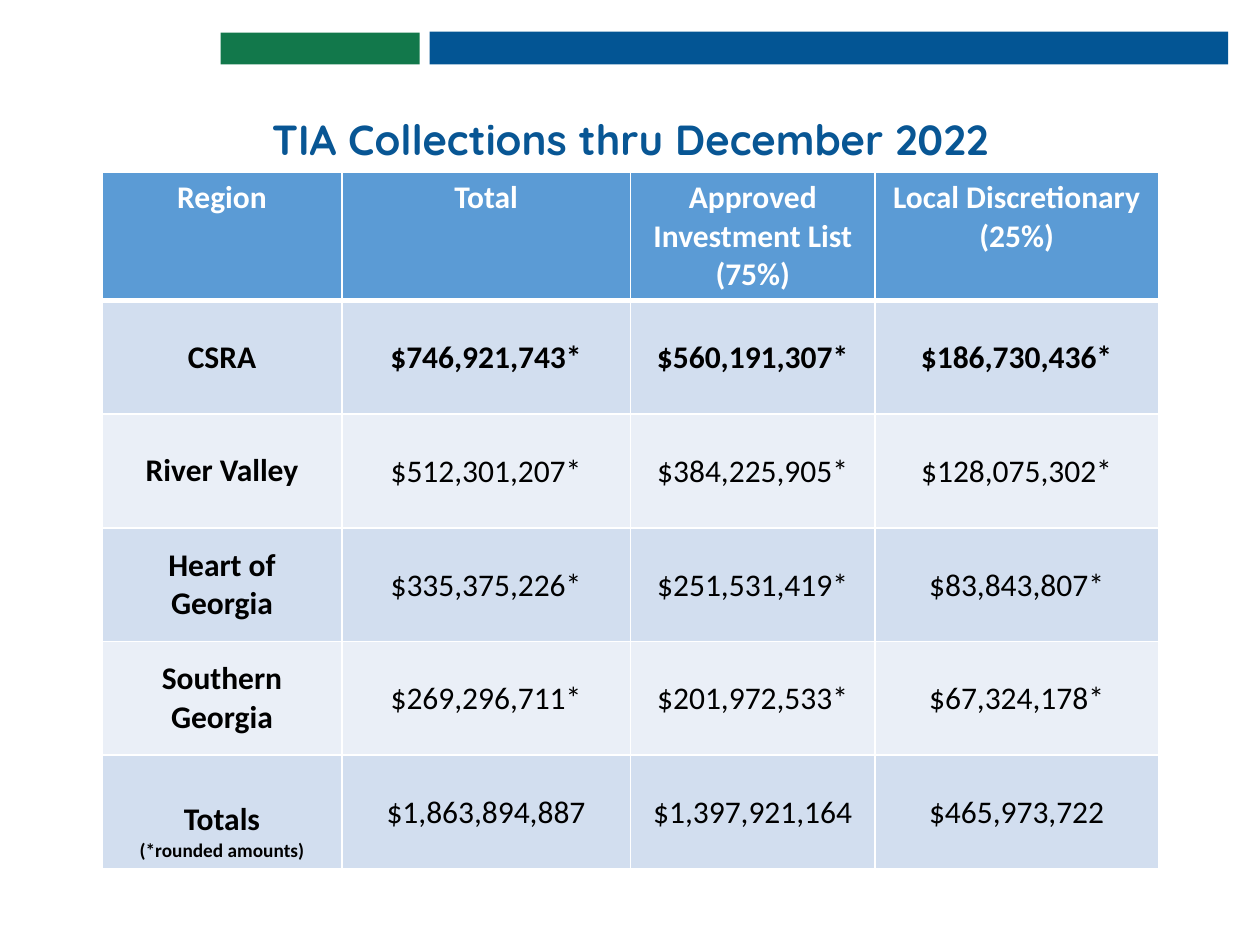
from lxml import etree
from pptx import Presentation
from pptx.dml.color import RGBColor
from pptx.enum.shapes import MSO_SHAPE
from pptx.enum.text import MSO_ANCHOR, MSO_AUTO_SIZE, PP_ALIGN
from pptx.oxml.ns import qn
from pptx.util import Cm, Pt

RECTANGLE = MSO_SHAPE.RECTANGLE
TOP, MIDDLE, BOTTOM = MSO_ANCHOR.TOP, MSO_ANCHOR.MIDDLE, MSO_ANCHOR.BOTTOM
CENTER = PP_ALIGN.CENTER
NO_AUTOFIT = MSO_AUTO_SIZE.NONE

BAR_BLUE = RGBColor(0x03, 0x55, 0x94)
BAR_GREEN = RGBColor(0x12, 0x78, 0x4B)
TITLE_BLUE = RGBColor(0x08, 0x56, 0x94)
HEADER_BLUE = RGBColor(0x5B, 0x9B, 0xD5)
BAND_DARK = RGBColor(0xD2, 0xDE, 0xEF)
BAND_LIGHT = RGBColor(0xEA, 0xEF, 0xF7)
WHITE = RGBColor(0xFF, 0xFF, 0xFF)
BLACK = RGBColor(0x00, 0x00, 0x00)

COLLECTIONS = [
    ["Region", "Total", "Approved Investment List (75%)", "Local Discretionary (25%)"],
    ["CSRA", "$746,921,743*", "$560,191,307*", "$186,730,436*"],
    ["River Valley", "$512,301,207*", "$384,225,905*", "$128,075,302*"],
    ["Heart of Georgia", "$335,375,226*", "$251,531,419*", "$83,843,807*"],
    ["Southern Georgia", "$269,296,711*", "$201,972,533*", "$67,324,178*"],
    ["Totals\n(*rounded amounts)", "$1,863,894,887", "$1,397,921,164", "$465,973,722"],
]
COLUMN_WIDTHS = [4.83, 5.82, 4.93, 5.71]
HEADER_HEIGHT, REGION_HEIGHT = 2.54, 2.29


def apply_format(target, values):
    for name, value in values.items():
        setattr(target, name, value)


def add_border(cell, side, points):
    line = etree.SubElement(cell._tc.get_or_add_tcPr(), qn(f"a:{side}"), w=str(Pt(points)))
    fill = etree.SubElement(line, qn("a:solidFill"))
    etree.SubElement(fill, qn("a:srgbClr"), val=str(WHITE))


prs = Presentation()
prs.slide_width, prs.slide_height = Cm(25.4), Cm(19.05)
slide = prs.slides.add_slide(prs.slide_layouts[5])

for left, top, width, height, color in [
    (8.66, 0.64, 16.1, 0.66, BAR_BLUE),
    (4.45, 0.66, 4.01, 0.64, BAR_GREEN),
]:
    bar = slide.shapes.add_shape(RECTANGLE, Cm(left), Cm(top), Cm(width), Cm(height))
    bar.shadow.inherit = False
    bar.fill.solid()
    bar.fill.fore_color.rgb = color
    bar.line.fill.background()

title = slide.shapes.title
apply_format(title, {"left": Cm(0), "top": Cm(1.85), "width": Cm(25.4), "height": Cm(1.6)})
title.text_frame.text = "TIA Collections thru December 2022"
apply_format(title.text_frame, {"vertical_anchor": BOTTOM, "auto_size": NO_AUTOFIT, "word_wrap": True})
heading = title.text_frame.paragraphs[0]
apply_format(heading, {"alignment": CENTER, "line_spacing": 0.9})
apply_format(heading.font, {"name": "Quicksand", "size": Pt(24), "bold": True})
heading.font.color.rgb = TITLE_BLUE

table = slide.shapes.add_table(
    len(COLLECTIONS), len(COLUMN_WIDTHS), Cm(2.06), Cm(3.48),
    Cm(sum(COLUMN_WIDTHS)), Cm(HEADER_HEIGHT + 5 * REGION_HEIGHT),
).table
for column, width in zip(table.columns, COLUMN_WIDTHS):
    column.width = Cm(width)

for r, amounts in enumerate(COLLECTIONS):
    is_header = r == 0
    is_totals = r == len(COLLECTIONS) - 1
    table.rows[r].height = Cm(HEADER_HEIGHT if is_header else REGION_HEIGHT)
    for c, text in enumerate(amounts):
        cell = table.cell(r, c)
        is_region = c == 0
        for side in ("lnL", "lnR", "lnT", "lnB"):
            thick = (is_header and side == "lnB") or (r == 1 and side == "lnT")
            add_border(cell, side, 3 if thick else 1)
        cell.fill.solid()
        cell.fill.fore_color.rgb = HEADER_BLUE if is_header else BAND_DARK if r % 2 else BAND_LIGHT
        cell.vertical_anchor = TOP if is_header else BOTTOM if is_totals and is_region else MIDDLE
        if not is_header and not is_region:
            apply_format(cell, {"margin_left": Cm(0.03), "margin_right": Cm(0.03),
                                "margin_top": Cm(0.03), "margin_bottom": Cm(0)})
        cell.text = text
        for i, paragraph in enumerate(cell.text_frame.paragraphs):
            paragraph.alignment = CENTER
            apply_format(paragraph.font, {"name": "Calibri", "size": Pt(11 if i else 18),
                                          "bold": r < 2 or is_region})
            paragraph.font.color.rgb = WHITE if is_header else BLACK

prs.save("out.pptx")
